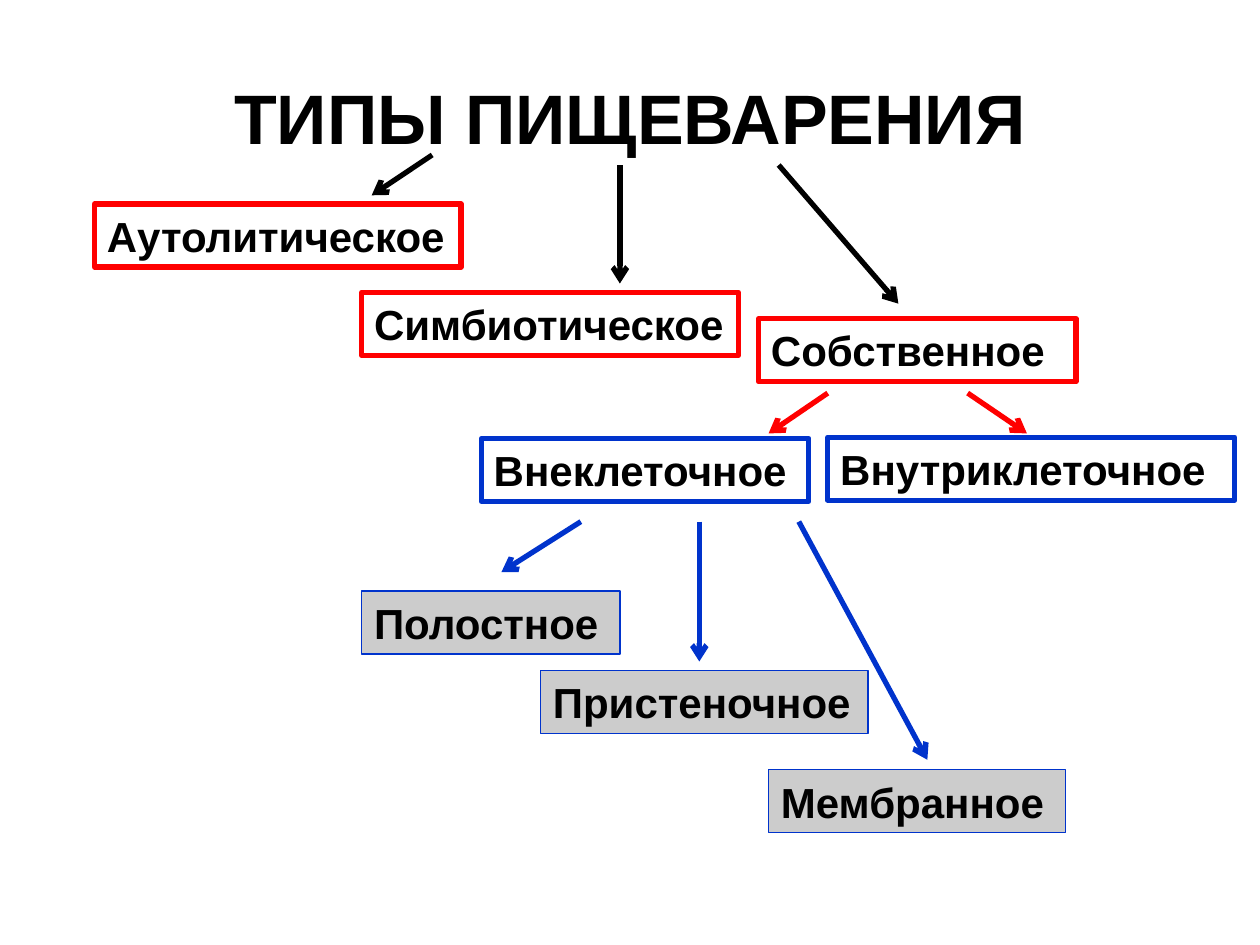
from dataclasses import dataclass

from lxml import etree
from pptx import Presentation
from pptx import util as u
from pptx.dml.color import RGBColor
from pptx.enum import shapes, text
from pptx.oxml import ns


@dataclass(frozen=True)
class Theme:
    font: str = "Arial"
    title_size: int = 40
    box_size: int = 24
    thick: float = 3
    thin: float = 0.75
    black: RGBColor = RGBColor(0x00, 0x00, 0x00)
    red: RGBColor = RGBColor(0xFF, 0x00, 0x00)
    blue: RGBColor = RGBColor(0x00, 0x33, 0xCC)
    gray: RGBColor = RGBColor(0xCC, 0xCC, 0xCC)


THEME = Theme()
BOX_HEIGHT = 0.5

# Each level: line colour, line width, fill, boxes as (text, left, top, width)
LEVELS = [
    (THEME.red, THEME.thick, None, [
        ("Аутолитическое", 0.75, 1.62, 2.91),
        ("Симбиотическое", 2.87, 2.32, 2.99),
        ("Собственное", 6.02, 2.53, 2.52),
    ]),
    (THEME.blue, THEME.thick, None, [
        ("Внутриклеточное", 6.57, 3.47, 3.23),
        ("Внеклеточное", 3.82, 3.48, 2.6),
    ]),
    (THEME.blue, THEME.thin, THEME.gray, [
        ("Полостное", 2.87, 4.69, 2.05),
        ("Пристеночное", 4.29, 5.32, 2.6),
        ("Мембранное", 6.1, 6.11, 2.36),
    ]),
]

# Each group: colour, arrows as (start x, start y, end x, end y)
ARROWS = [
    (THEME.red, [(6.57, 3.12, 6.1, 3.44), (7.68, 3.12, 8.15, 3.44)]),
    (THEME.blue, [(4.61, 4.14, 3.98, 4.54), (5.55, 4.14, 5.55, 5.25),
                  (6.34, 4.14, 7.36, 6.03)]),
    (THEME.black, [(3.43, 1.23, 2.95, 1.55), (4.92, 1.31, 4.92, 2.25),
                   (6.18, 1.31, 7.13, 2.41)]),
]


def write_text(shape, words, size, align=text.PP_ALIGN.LEFT,
               anchor=text.MSO_ANCHOR.TOP, autofit=text.MSO_AUTO_SIZE.NONE):
    frame = shape.text_frame
    frame.word_wrap = True
    frame.auto_size = autofit
    frame.vertical_anchor = anchor
    paragraph = frame.paragraphs[0]
    paragraph.alignment = align
    run = paragraph.add_run()
    run.text = words
    run.font.name = THEME.font
    run.font.size = u.Pt(size)
    run.font.bold = True
    run.font.color.rgb = THEME.black


def set_line(shape, color, width):
    shape.line.color.rgb = color
    shape.line.width = u.Pt(width)


def add_title(slide, words):
    title = slide.shapes.title
    title.left, title.top = u.Inches(0.5), u.Inches(0.3)
    title.width, title.height = u.Inches(9), u.Inches(1.25)
    write_text(title, words, THEME.title_size, align=text.PP_ALIGN.CENTER,
               anchor=text.MSO_ANCHOR.MIDDLE)


def add_box(slide, words, left, top, width, color, line_width, fill):
    box = slide.shapes.add_shape(
        shapes.MSO_SHAPE.RECTANGLE,
        *map(u.Inches, (left, top, width, BOX_HEIGHT)))
    box.shadow.inherit = False
    if fill is None:
        box.fill.background()
    else:
        box.fill.solid()
        box.fill.fore_color.rgb = fill
    set_line(box, color, line_width)
    write_text(box, words, THEME.box_size,
               autofit=text.MSO_AUTO_SIZE.SHAPE_TO_FIT_TEXT)


def add_arrow(slide, ends, color):
    arrow = slide.shapes.add_connector(
        shapes.MSO_CONNECTOR.STRAIGHT, *map(u.Inches, ends))
    set_line(arrow, color, THEME.thick)
    properties = arrow.element.spPr
    line = properties.find(ns.qn("a:ln"))
    etree.SubElement(line, ns.qn("a:tailEnd"), type="arrow")
    etree.SubElement(properties, ns.qn("a:effectLst"))


def main():
    presentation = Presentation()
    presentation.slide_width = u.Inches(10)
    presentation.slide_height = u.Inches(7.5)
    title_only = presentation.slide_layouts.get_by_name("Title Only")
    slide = presentation.slides.add_slide(title_only)

    add_title(slide, "ТИПЫ ПИЩЕВАРЕНИЯ")
    for color, line_width, fill, boxes in LEVELS:
        for box in boxes:
            add_box(slide, *box, color, line_width, fill)
    for color, arrows in ARROWS:
        for ends in arrows:
            add_arrow(slide, ends, color)

    presentation.save("out.pptx")


if __name__ == "__main__":
    main()
